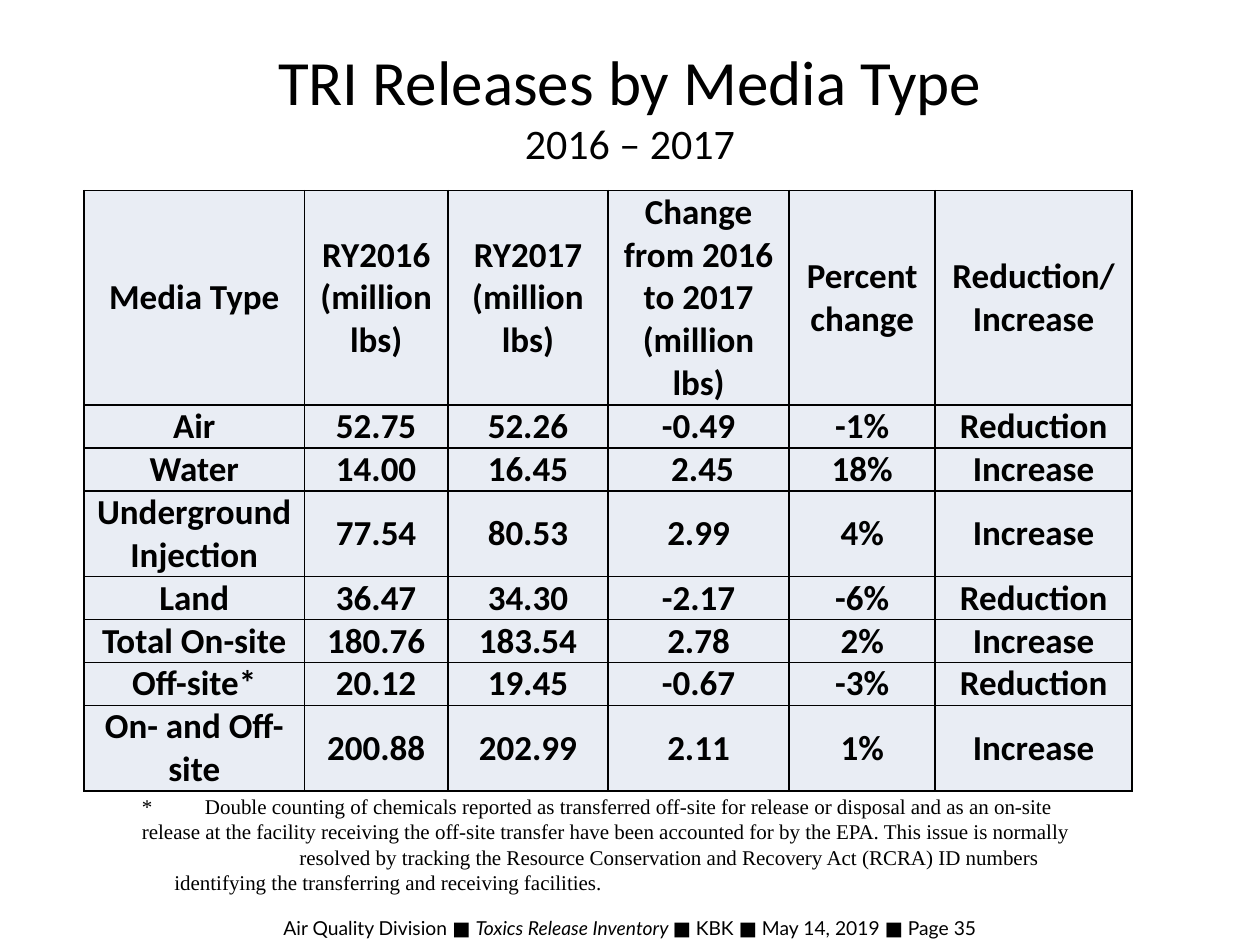
"""Build the slide of TRI releases by media type."""
import pptx
import pptx.dml.color
import pptx.enum.shapes
import pptx.enum.text
import pptx.oxml
import pptx.oxml.ns
import pptx.util

Pt = pptx.util.Pt
ALIGN = pptx.enum.text.PP_ALIGN
ANCHOR = pptx.enum.text.MSO_ANCHOR
FIT = pptx.enum.text.MSO_AUTO_SIZE
HUES = {"ink": "000000", "paper": "FFFFFF", "cell": "E9EDF4"}
COLS = [126, 82, 91.5, 103.5, 83.5, 112.5]
ROWS = [84, 24, 24, 48, 24, 24, 24, 41]
DATA = [
    ["Media Type", "RY2016\n(million lbs)", "RY2017\n(million lbs)",
     "Change from 2016 to 2017\n(million lbs)", "Percent change",
     "Reduction/\nIncrease"],
    ["Air", "52.75", "52.26", "-0.49", "-1%", "Reduction"],
    ["Water", "14.00", "16.45", " 2.45", "18%", "Increase"],
    ["Underground Injection", "77.54", "80.53", "2.99", "4%", "Increase"],
    ["Land", "36.47", "34.30", "-2.17", "-6%", "Reduction"],
    ["Total On-site", "180.76", "183.54", "2.78", "2%", "Increase"],
    ["Off-site*", "20.12", "19.45", "-0.67", "-3%", "Reduction"],
    ["On- and Off-site", "200.88", "202.99", "2.11", "1%", "Increase"],
]
NOTE = [
    "*\tDouble counting of chemicals reported as transferred off-site for "
    "release or disposal and as an on-site release at the facility receiving "
    "the off-site transfer have been accounted for by the EPA. This issue is "
    "normally",
    "resolved by tracking the Resource Conservation and Recovery Act (RCRA) "
    "ID numbers identifying the transferring and receiving facilities.",
]
FOOT = ["Air Quality Division ■ ", "Toxics Release Inventory ■ ",
        "KBK ■ May 14, 2019 ■ Page 35"]


def hue(name):
    return pptx.dml.color.RGBColor.from_string(HUES[name])


def write(frame, *runs, size=20, face="Calibri", bold=False, slant=None,
          align=ALIGN.CENTER):
    para = frame.paragraphs[0] if not frame.text else frame.add_paragraph()
    para.alignment = align
    for spot, words in enumerate(runs):
        run = para.add_run()
        run.text = words
        font = run.font
        font.size, font.name, font.bold = Pt(size), face, bold
        font.italic = spot == slant
        font.color.rgb = hue("ink")
    return para


def rule(cell):
    props = cell._tc.get_or_add_tcPr()
    for spot, side in enumerate(("lnL", "lnR", "lnT", "lnB")):
        props.insert(spot, pptx.oxml.parse_xml(
            f'<a:{side} {pptx.oxml.ns.nsdecls("a")} w="12700"><a:solidFill>'
            f'<a:srgbClr val="{HUES["ink"]}"/></a:solidFill></a:{side}>'))


def indent(para, left, first, stop=None):
    props = para._p.get_or_add_pPr()
    props.set("marL", str(Pt(left)))
    props.set("indent", str(Pt(first)))
    if stop:
        props.append(pptx.oxml.parse_xml(
            f'<a:tabLst {pptx.oxml.ns.nsdecls("a")}>'
            f'<a:tab pos="{Pt(stop)}" algn="l"/></a:tabLst>'))


def head(slide):
    title = slide.shapes.title
    title.left, title.top = Pt(144), Pt(20)
    title.width, title.height = Pt(432), Pt(80)
    frame = title.text_frame
    frame.auto_size, frame.vertical_anchor = FIT.NONE, ANCHOR.MIDDLE
    write(frame, "TRI Releases by Media Type", size=36)
    write(frame, "2016 – 2017", size=24)


def grid(slide):
    shape = slide.shapes.add_table(len(ROWS), len(COLS), Pt(48), Pt(109),
                                   Pt(sum(COLS)), Pt(sum(ROWS)))
    table = shape.table
    table.first_row = table.horz_banding = False
    for col, width in zip(table.columns, COLS):
        col.width = Pt(width)
    for row, tall, line in zip(table.rows, ROWS, DATA):
        row.height = Pt(tall)
        for cell, words in zip(row.cells, line):
            cell.margin_left = cell.margin_right = Pt(4.5)
            cell.margin_top = cell.margin_bottom = 0
            cell.vertical_anchor = ANCHOR.MIDDLE
            cell.fill.solid()
            cell.fill.fore_color.rgb = hue("cell")
            rule(cell)
            for part in words.split("\n"):
                write(cell.text_frame, part, bold=True)
    shape.height = Pt(336)


def note(slide):
    box = slide.shapes.add_textbox(Pt(74), Pt(450), Pt(564), Pt(65.5))
    frame = box.text_frame
    frame.word_wrap, frame.margin_right = True, Pt(13)
    style = {"size": 12, "face": "Times New Roman", "align": ALIGN.LEFT}
    indent(write(frame, NOTE[0], **style), 0, 0, stop=18)
    indent(write(frame, NOTE[1], **style), 18.5, 71.5)


def foot(slide):
    bar = slide.shapes.add_shape(pptx.enum.shapes.MSO_SHAPE.RECTANGLE,
                                 0, Pt(520), Pt(720), Pt(20))
    bar.shadow.inherit = False
    bar.fill.solid()
    bar.fill.fore_color.rgb = bar.line.color.rgb = hue("paper")
    bar.line.width = Pt(1)
    write(bar.text_frame, *FOOT, size=11, face="Lato", slant=1)


def main():
    deck = pptx.Presentation()
    deck.slide_width, deck.slide_height = Pt(720), Pt(540)
    slide = deck.slides.add_slide(deck.slide_layouts[5])
    for draw in (foot, grid, head, note):
        draw(slide)
    deck.save("out.pptx")


if __name__ == "__main__":
    main()
